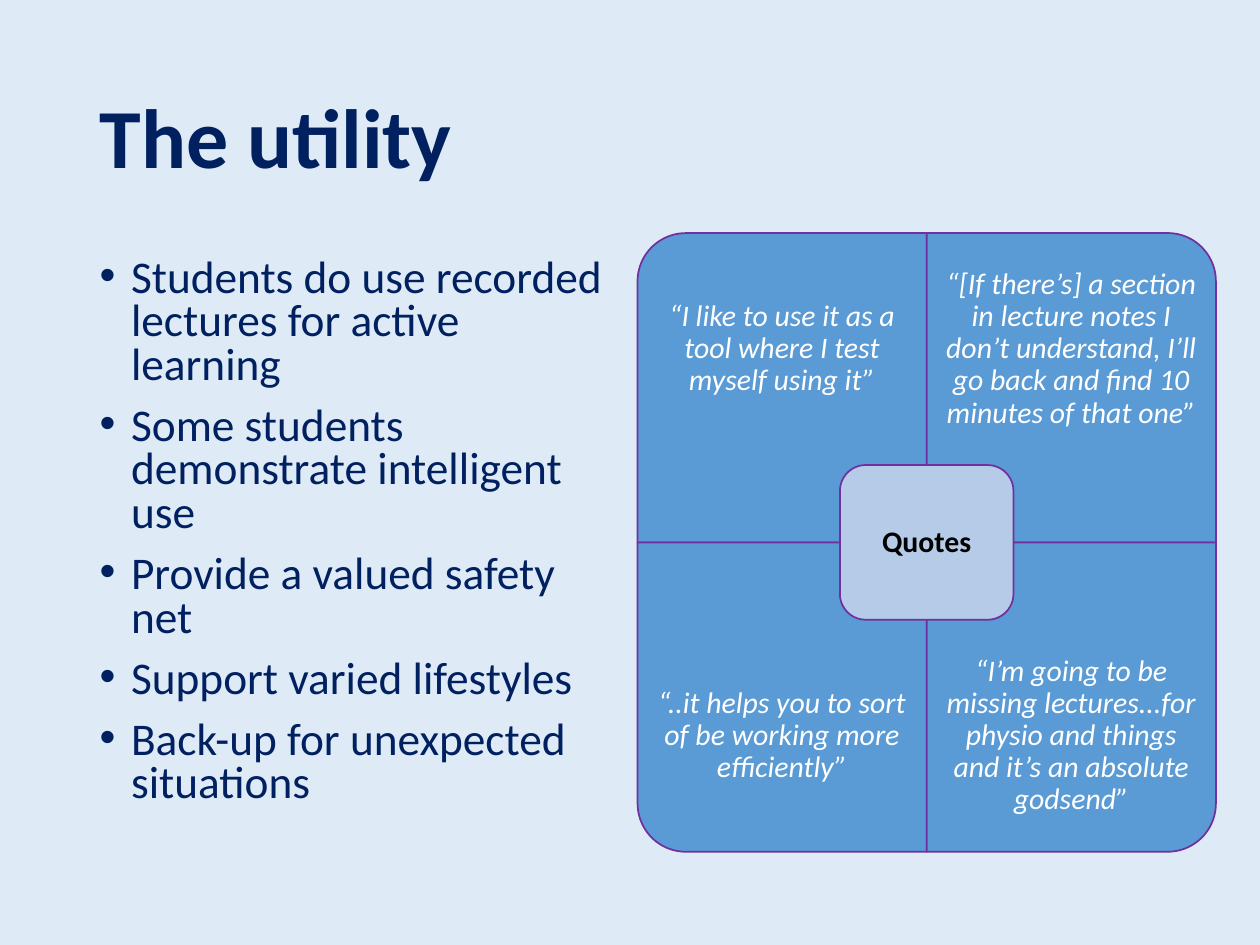
from dataclasses import dataclass
from itertools import product

from pptx import Presentation
from pptx.dml.color import RGBColor
from pptx.enum.shapes import MSO_SHAPE
from pptx.enum.text import MSO_ANCHOR, MSO_AUTO_SIZE, PP_ALIGN
from pptx.oxml.ns import qn
from pptx.util import Inches, Pt


@dataclass(frozen=True)
class Theme:
    """Colours and type sizes of the slide."""
    font: str = "Calibri"
    background: str = "DEEBF7"
    heading: str = "002060"
    tile: str = "5B9BD5"
    hub: str = "B5CBE7"
    border: str = "7030A0"
    light: str = "FFFFFF"
    dark: str = "000000"
    title_size: float = 48
    list_size: float = 25.9
    quote_size: float = 17


class SlideBuilder:
    """Places styled elements on a grid of 100 columns by 75 rows."""

    def __init__(self, deck, theme):
        """Start a slide with the theme's background."""
        self.theme = theme
        self.column = deck.slide_width / 100
        self.row = deck.slide_height / 75
        self.slide = deck.slides.add_slide(deck.slide_layouts[1])
        self.paint(self.slide.background.fill, theme.background)

    def paint(self, fill, color):
        """Make a fill solid in one colour."""
        fill.solid()
        fill.fore_color.rgb = RGBColor.from_string(color)

    def box(self, left, top, width, height):
        """Turn grid units into slide lengths."""
        return (round(left * self.column), round(top * self.row),
                round(width * self.column), round(height * self.row))

    def add_text(self, paragraph, text, size, color, spacing=0.9, bold=None, italic=None):
        """Add one styled run to a paragraph."""
        paragraph.line_spacing = spacing
        run = paragraph.add_run()
        run.text = text
        font = run.font
        font.name, font.size = self.theme.font, Pt(size)
        font.bold, font.italic = bold, italic
        font.color.rgb = RGBColor.from_string(color)

    def place(self, placeholder, area, anchor):
        """Move a placeholder and return its text frame."""
        placeholder.left, placeholder.top, placeholder.width, placeholder.height = self.box(*area)
        frame = placeholder.text_frame
        frame.auto_size = MSO_AUTO_SIZE.NONE
        frame.vertical_anchor = anchor
        return frame

    def title(self, text, area):
        """Fill the title placeholder."""
        heading = self.place(self.slide.shapes.title, area, MSO_ANCHOR.MIDDLE).paragraphs[0]
        heading.alignment = PP_ALIGN.LEFT
        self.add_text(heading, text, self.theme.title_size, self.theme.heading, bold=True)

    def bullets(self, points, area):
        """Fill the body placeholder with a bulleted list."""
        frame = self.place(self.slide.placeholders[1], area, MSO_ANCHOR.TOP)
        for index, point in enumerate(points):
            item = frame.add_paragraph() if index else frame.paragraphs[0]
            item.space_before = Pt(10)
            self.add_text(item, point, self.theme.list_size, self.theme.heading, spacing=0.8)
            properties = item._p.get_or_add_pPr()
            properties.set("marL", str(Inches(0.25)))
            properties.set("indent", str(Inches(-0.25)))
            properties.append(properties.makeelement(qn("a:buChar"), {"char": "•"}))

    def panel(self, preset, area, color, rotation=0):
        """Draw a bordered shape that covers the area after its rotation."""
        left, top, width, height = self.box(*area)
        if rotation % 180:
            shift = (width - height) // 2
            left, top, width, height = left + shift, top - shift, height, width
        panel = self.slide.shapes.add_shape(preset, left, top, width, height)
        panel.rotation = rotation
        panel.shadow.inherit = False
        self.paint(panel.fill, color)
        panel.line.color.rgb = RGBColor.from_string(self.theme.border)
        panel.line.width = Pt(1)
        return panel

    def caption(self, frame, text, color, inset, bold=None, italic=None):
        """Put centred text inside a frame."""
        frame.word_wrap = True
        frame.vertical_anchor = MSO_ANCHOR.MIDDLE
        frame.margin_left = frame.margin_right = Inches(inset)
        frame.margin_top = frame.margin_bottom = Inches(inset)
        label = frame.paragraphs[0]
        label.alignment = PP_ALIGN.CENTER
        self.add_text(label, text, self.theme.quote_size, color, bold=bold, italic=italic)

    def matrix(self, quotes, hub, area):
        """Draw four quote tiles around a central hub."""
        left, top, width, height = area
        tile_width, tile_height = width / 2, height / 2
        text_height = tile_height * 0.75
        cells = product(range(2), range(2))
        for (row, column), rotation, quote in zip(cells, (270, 0, 180, 90), quotes):
            x, y = left + column * tile_width, top + row * tile_height
            self.panel(MSO_SHAPE.ROUND_1_RECTANGLE, (x, y, tile_width, tile_height),
                       self.theme.tile, rotation)
            text_top = y + row * (tile_height - text_height)
            quote_box = self.slide.shapes.add_textbox(
                *self.box(x, text_top, tile_width, text_height))
            self.caption(quote_box.text_frame, quote, self.theme.light, 0.13, italic=True)
        hub_width, hub_height = tile_width * 0.6, tile_height * 0.5
        center = self.panel(
            MSO_SHAPE.ROUNDED_RECTANGLE,
            (left + (width - hub_width) / 2, top + (height - hub_height) / 2,
             hub_width, hub_height),
            self.theme.hub)
        self.caption(center.text_frame, hub, self.theme.dark, 0.07, bold=True)


def main():
    """Build and save the slide."""
    deck = Presentation()
    deck.slide_width, deck.slide_height = Inches(10), Inches(7.5)
    builder = SlideBuilder(deck, Theme())
    builder.title("The utility", (6.9, 4, 86.2, 14.5))
    builder.bullets([
        "Students do use recorded lectures for active learning",
        "Some students demonstrate intelligent use",
        "Provide a valued safety net",
        "Support varied lifestyles",
        "Back-up for unexpected situations",
    ], (6.9, 20, 42.5, 47.6))
    builder.matrix([
        "“I like to use it as a tool where I test myself using it”",
        "“[If there’s] a section in lecture notes I don’t understand, "
        "I’ll go back and find 10 minutes of that one”",
        "“..it helps you to sort of be working more efficiently”",
        "“I’m going to be missing lectures...for physio and things "
        "and it’s an absolute godsend”",
    ], "Quotes", (50.6, 18.5, 45.9, 49.1))
    deck.save("out.pptx")


if __name__ == "__main__":
    main()
